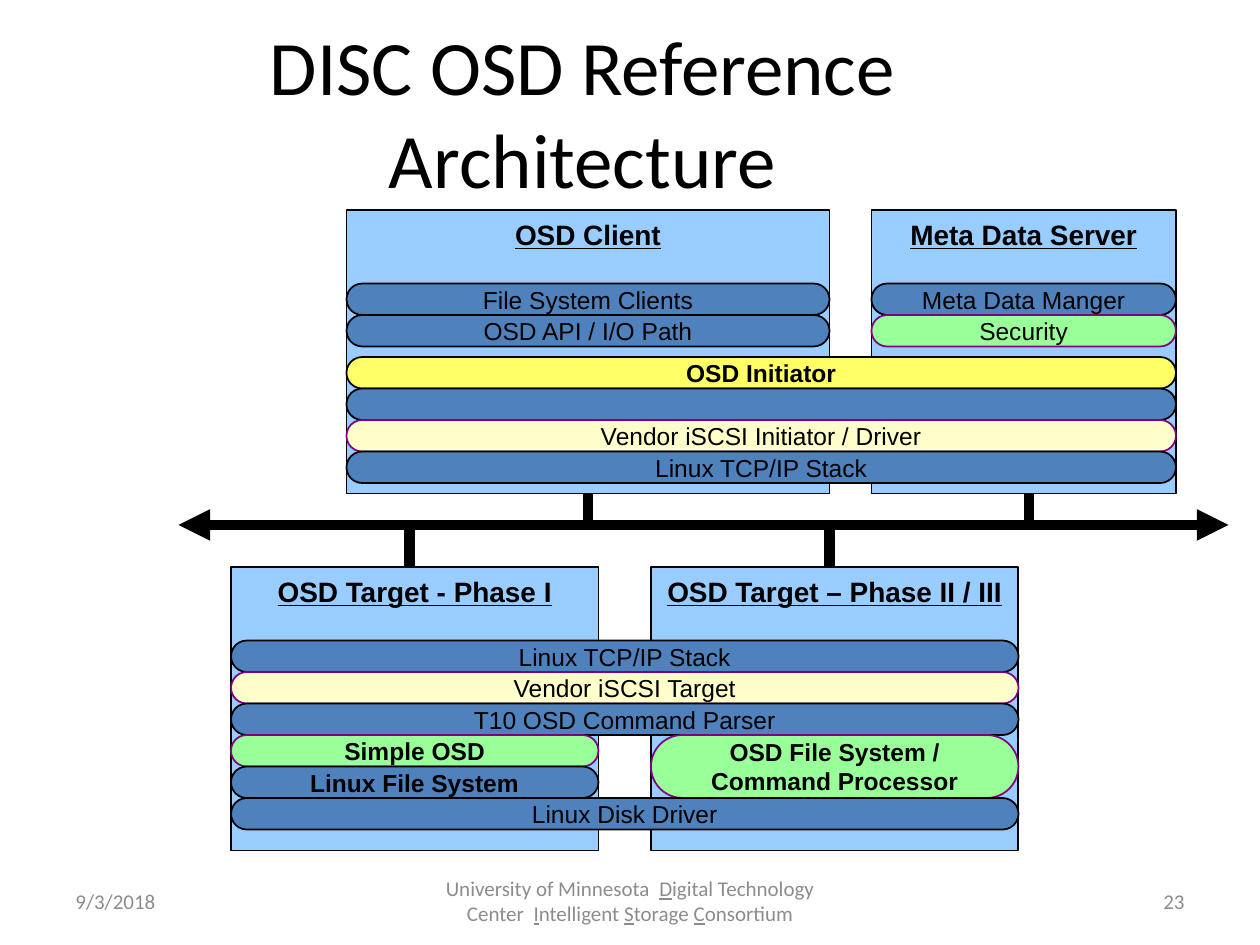
from lxml import etree
from pptx import Presentation
from pptx import util as u
from pptx.dml.color import RGBColor
from pptx.enum import shapes, text
from pptx.oxml.ns import qn

PX = 7620
BLUE, SKY, GREEN, CREAM, YELLOW = "4F81BD", "99CCFF", "99FF99", "FFFFCC", "FFFF66"
BLACK, PLUM, GRAY = "000000", "800080", "8C8C8C"
MID = text.PP_ALIGN.CENTER


def paint(color, code):
    color.rgb = RGBColor.from_string(code)


def write(shape, lines, size, face, code=BLACK, bold=False, align=MID):
    frame = shape.text_frame
    frame.vertical_anchor = text.MSO_ANCHOR.MIDDLE
    frame.text = lines
    for para in frame.paragraphs:
        para.alignment = align
        para.font.size = u.Pt(size)
        para.font.name = face
        para.font.bold = bold
        paint(para.font.color, code)
    return frame


deck = Presentation()
deck.slide_width, deck.slide_height = 1200 * PX, 900 * PX
slide = deck.slides.add_slide(deck.slide_layouts[6])
tree = slide.shapes

labels = [
    ("DISC OSD Reference Architecture", 110, 62, 890, 88, 44, BLACK, MID),
    ("9/3/2018", 60, 834, 280, 48, 12, GRAY, text.PP_ALIGN.LEFT),
    ("", 410, 834, 380, 48, 12, GRAY, MID),
    ("23", 860, 834, 280, 48, 12, GRAY, text.PP_ALIGN.RIGHT),
]
frames = []
for words, x, y, w, h, size, code, align in labels:
    box = tree.add_textbox(x * PX, y * PX, w * PX, h * PX)
    frame = write(box, words, size, "Calibri", code, align=align)
    frame.word_wrap = True
    frames.append(frame)

credit = ["University of Minnesota  ", "D", "igital Technology Center  ", "I",
          "ntelligent ", "S", "torage ", "C", "onsortium"]
for i, part in enumerate(credit):
    run = frames[2].paragraphs[0].add_run()
    run.text = part
    if i % 2:
        run.font.underline = True

hosts = [
    ("OSD Target - Phase I", 220, 540, 350),
    ("OSD Target – Phase II / III", 620, 540, 350),
    ("Meta Data Server", 830, 200, 290),
    ("OSD Client", 330, 200, 460),
]
for name, x, y, w in hosts:
    host = tree.add_shape(shapes.MSO_SHAPE.RECTANGLE, x * PX, y * PX, w * PX, 270 * PX)
    host.shadow.inherit = False
    host.fill.solid()
    paint(host.fill.fore_color, SKY)
    paint(host.line.color, BLACK)
    host.line.width = u.Pt(1)
    frame = write(host, name, 16, "Arial", bold=True)
    frame.vertical_anchor = text.MSO_ANCHOR.TOP
    frame.margin_top = 7 * PX
    frame.word_wrap = False
    frame.paragraphs[0].font.underline = True
client = host

ROW = 30
stacks = [
    (330, 270, 460, [("File System Clients", BLUE, False),
                     ("OSD API / I/O Path", BLUE, False)]),
    (830, 270, 290, [("Meta Data Manger", BLUE, False),
                     ("Security", GREEN, False)]),
    (330, 340, 790, [("OSD Initiator", YELLOW, True),
                     ("", BLUE, False),
                     ("Vendor iSCSI Initiator / Driver", CREAM, False),
                     ("Linux TCP/IP Stack", BLUE, False)]),
    (220, 610, 750, [("Linux TCP/IP Stack", BLUE, False),
                     ("Vendor iSCSI Target", CREAM, False),
                     ("T10 OSD Command Parser", BLUE, False)]),
    (220, 700, 350, [("Simple OSD", GREEN, True),
                     ("Linux File System", BLUE, True)]),
    (620, 700, 350, [("OSD File System /\nCommand Processor", GREEN, True)]),
    (220, 760, 750, [("Linux Disk Driver", BLUE, False)]),
]
for x, y, w, bars in stacks:
    for name, code, bold in bars:
        h = ROW * (name.count("\n") + 1)
        bar = tree.add_shape(shapes.MSO_SHAPE.ROUNDED_RECTANGLE,
                             x * PX, y * PX, w * PX, h * PX)
        bar.adjustments[0] = 0.5
        bar.shadow.inherit = False
        bar.fill.solid()
        paint(bar.fill.fore_color, code)
        paint(bar.line.color, PLUM if code in (GREEN, CREAM) else BLACK)
        bar.line.width = u.Pt(1)
        write(bar, name, 14, "Arial", bold=bold).word_wrap = False
        y += h

wires = [
    (560, 470, 560, 496),
    (980, 470, 980, 496),
    (390, 504, 390, 540),
    (790, 504, 790, 540),
    (170, 500, 1170, 500),
]
links = []
for ends in wires:
    link = tree.add_connector(shapes.MSO_CONNECTOR.STRAIGHT, *(n * PX for n in ends))
    paint(link.line.color, BLACK)
    link.line.width = u.Pt(6)
    etree.SubElement(link._element.spPr, qn("a:effectLst"))
    links.append(link)
links[0].begin_connect(client, 2)
line = links[-1].line._get_or_add_ln()
for tip in ("a:headEnd", "a:tailEnd"):
    etree.SubElement(line, qn(tip), type="triangle")

deck.save("out.pptx")
